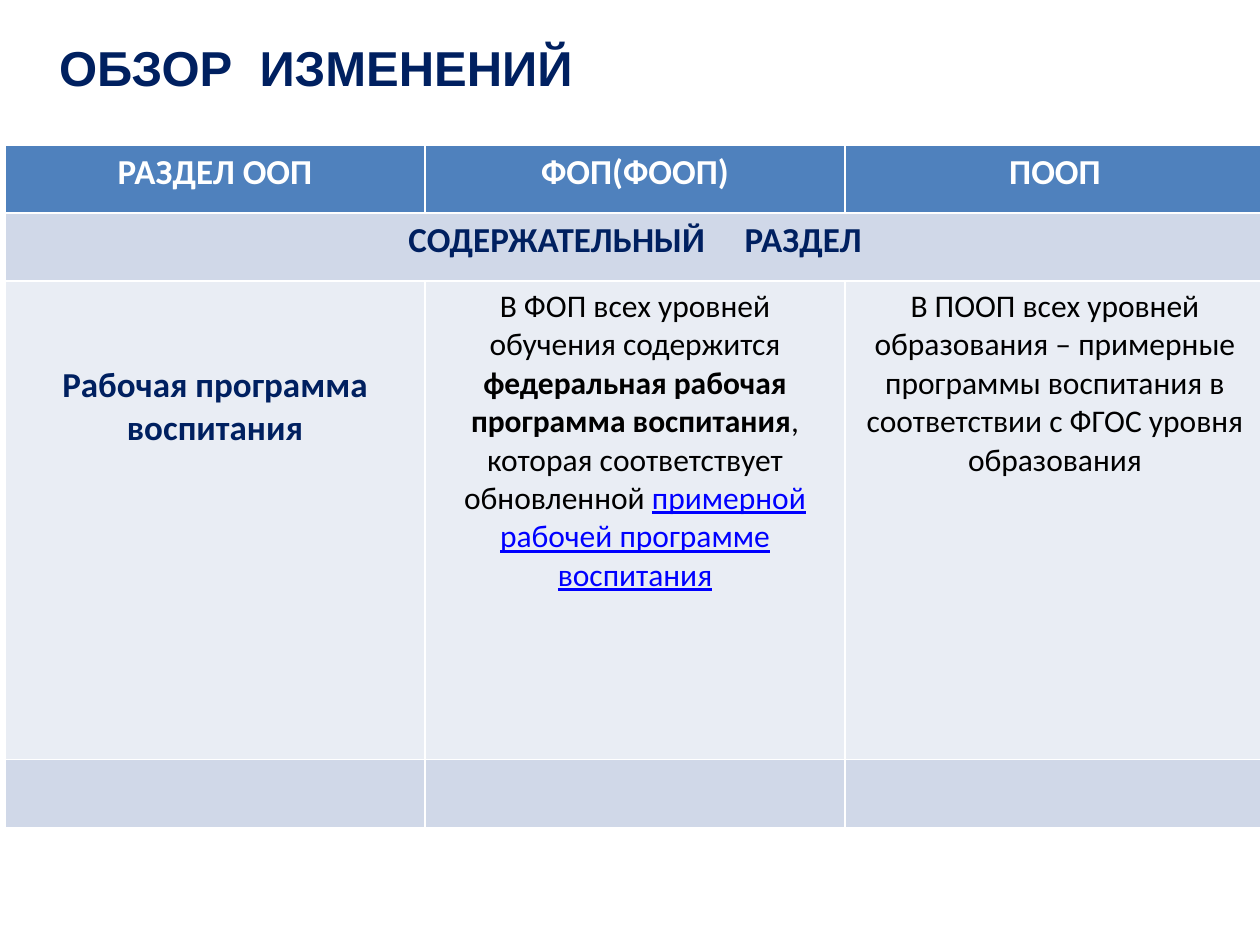
from typing import NamedTuple, Optional

from pptx import Presentation
from pptx import util as u
from pptx.dml.color import RGBColor
from pptx.enum import text

NAVY = RGBColor(0x00, 0x20, 0x60)
BLUE = RGBColor(0x4F, 0x81, 0xBD)
BAND = RGBColor(0xD0, 0xD8, 0xE8)
PALE = RGBColor(0xE9, 0xED, 0xF4)
LINK = RGBColor(0x00, 0x00, 0xFF)
BLACK = RGBColor(0x00, 0x00, 0x00)
WHITE = RGBColor(0xFF, 0xFF, 0xFF)

SLIDE_WIDTH, SLIDE_HEIGHT = u.Inches(10), u.Inches(7.5)
ROW_HEIGHTS = (0.54, 0.54, 3.8, 0.54)


class Style(NamedTuple):
    size: int
    color: RGBColor
    bold: bool = False
    face: str = "Calibri"


class Piece(NamedTuple):
    words: str
    bold: Optional[bool] = None
    link: bool = False
    tracking: float = 0


class Entry(NamedTuple):
    pieces: tuple[Piece, ...]
    style: Style
    top_margin: float = 0.05


class Row(NamedTuple):
    fill: RGBColor
    entries: tuple[Entry, ...] = ()


TITLE = Style(28, NAVY, True, "Arial")
HEADER = Style(20, WHITE, True)
SECTION = Style(20, NAVY, True)
BODY = Style(18, BLACK)

ROWS = (
    Row(BLUE, tuple(Entry((Piece(name),), HEADER)
                    for name in ("РАЗДЕЛ ООП", "ФОП(ФООП)", "ПООП"))),
    Row(BAND, (Entry((Piece("СОДЕРЖАТЕЛЬНЫЙ"), Piece(" ", tracking=18),
                      Piece("РАЗДЕЛ")), SECTION),)),
    Row(PALE, (
        Entry((Piece("Рабочая программа воспитания"),), SECTION, 0.66),
        Entry((
            Piece("В ФОП всех уровней обучения содержится "),
            Piece("федеральная рабочая программа воспитания", bold=True),
            Piece(", которая соответствует обновленной "),
            Piece("примерной рабочей программе воспитания", link=True),
        ), BODY),
        Entry((Piece("В ПООП всех уровней образования – примерные программы "
                     "воспитания в соответствии с ФГОС уровня образования"),), BODY),
    )),
    Row(BAND),
)


def write(paragraph, pieces: tuple[Piece, ...], style: Style) -> None:
    font = paragraph.font
    font.name, font.size, font.bold = style.face, u.Pt(style.size), style.bold
    font.color.rgb = style.color
    for piece in pieces:
        run = paragraph.add_run()
        run.text = piece.words
        # Table styles can outrank paragraph defaults, so weight and colour go on runs.
        run.font.bold = style.bold if piece.bold is None else piece.bold
        run.font.color.rgb = LINK if piece.link else style.color
        if piece.link:
            run.font.underline = True
        if piece.tracking:
            run.font._element.set("spc", str(round(piece.tracking * 100)))


def add_title(slide) -> None:
    box = slide.shapes.add_textbox(u.Inches(0.37), u.Inches(0.25),
                                   u.Inches(9.25), u.Inches(0.57))
    frame = box.text_frame
    frame.word_wrap = True
    frame.auto_size = text.MSO_AUTO_SIZE.SHAPE_TO_FIT_TEXT
    write(frame.paragraphs[0],
          (Piece("ОБЗОР"), Piece(" ", tracking=7.8), Piece("ИЗМЕНЕНИЙ")), TITLE)


def add_changes_table(slide) -> None:
    table = slide.shapes.add_table(
        len(ROWS), 3, u.Inches(0.04), u.Inches(1.15),
        SLIDE_WIDTH, u.Inches(sum(ROW_HEIGHTS))).table
    table.cell(1, 0).merge(table.cell(1, 2))
    for index, (row, height) in enumerate(zip(ROWS, ROW_HEIGHTS)):
        table.rows[index].height = u.Inches(height)
        for cell in table.rows[index].cells:
            cell.fill.solid()
            cell.fill.fore_color.rgb = row.fill
        for column, entry in enumerate(row.entries):
            cell = table.cell(index, column)
            cell.margin_top = u.Inches(entry.top_margin)
            paragraph = cell.text_frame.paragraphs[0]
            paragraph.alignment = text.PP_ALIGN.CENTER
            write(paragraph, entry.pieces, entry.style)


def main() -> None:
    deck = Presentation()
    deck.slide_width, deck.slide_height = SLIDE_WIDTH, SLIDE_HEIGHT
    slide = deck.slides.add_slide(deck.slide_layouts[6])
    add_title(slide)
    add_changes_table(slide)
    deck.save("out.pptx")


if __name__ == "__main__":
    main()
